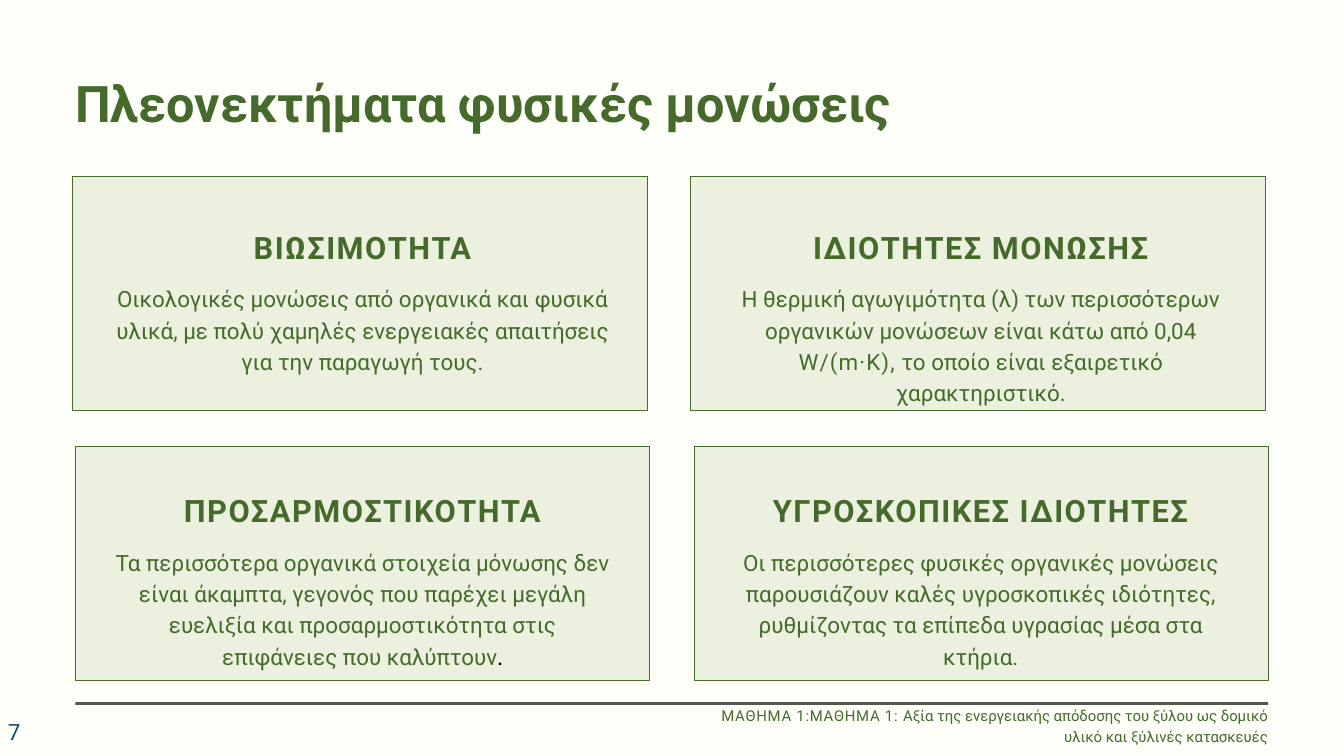
from pptx import Presentation
from pptx.dml.color import RGBColor
from pptx.enum import shapes, text
from pptx.util import Inches, Pt

COLORS = {
    "background": "FEFFF8",
    "green": "456A2C",
    "card": "EBF1DE",
    "rule": "52584D",
    "number": "1E4D65",
    "black": "000000",
}
ALIGN = text.PP_ALIGN
CARD_SIZE = (8.55, 3.48)
CARD_TEXT_WIDTH = 7.39

# Each card: box left and top, inset of its text, heading, body runs
CARDS = [
    ((1.08, 2.62), (0.62, 0.76), "ΒΙΩΣΙΜΟΤΗΤΑ", [
        ("Οικολογικές μονώσεις από οργανικά και φυσικά υλικά, με πολύ χαμηλές "
         "ενεργειακές απαιτήσεις για την παραγωγή τους.", {})]),
    ((10.28, 2.62), (0.62, 0.76), "ΙΔΙΟΤΗΤΕΣ ΜΟΝΩΣΗΣ", [
        ("Η θερμική αγωγιμότητα (λ) των περισσότερων οργανικών μονώσεων "
         "είναι κάτω από 0,04", {}),
        (" W/(m·K),", {"spacing": 1.2}),
        (" το οποίο είναι εξαιρετικό χαρακτηριστικό.", {})]),
    ((1.12, 6.64), (0.58, 0.66), "ΠΡΟΣΑΡΜΟΣΤΙΚΟΤΗΤΑ", [
        ("Τα περισσότερα οργανικά στοιχεία μόνωσης δεν είναι άκαμπτα, γεγονός "
         "που παρέχει μεγάλη ευελιξία και προσαρμοστικότητα στις επιφάνειες "
         "που καλύπτουν", {}),
        (".", {"font": "Calibri", "color": "black"})]),
    ((10.33, 6.64), (0.57, 0.66), "ΥΓΡΟΣΚΟΠΙΚΕΣ ΙΔΙΟΤΗΤΕΣ", [
        ("Οι περισσότερες φυσικές οργανικές μονώσεις παρουσιάζουν καλές "
         "υγροσκοπικές ιδιότητες, ρυθμίζοντας τα επίπεδα υγρασίας μέσα στα "
         "κτήρια.", {})]),
]


def rgb(name):
    return RGBColor.from_string(COLORS[name])


def add_run(paragraph, words, size, color="green", font="Roboto", bold=False, spacing=0):
    run = paragraph.add_run()
    run.text = words
    run.font.size = Pt(size)
    run.font.name = font
    run.font.bold = bold
    run.font.color.rgb = rgb(color)
    if spacing:
        run.font._element.set("spc", str(round(spacing * 100)))


def add_text(slide, box, runs, size, leading=None, align=ALIGN.LEFT, inset=0):
    frame = slide.shapes.add_textbox(*map(Inches, box)).text_frame
    frame.word_wrap = True
    frame.margin_left = frame.margin_right = Inches(inset)
    frame.margin_top = frame.margin_bottom = Inches(inset / 2)
    paragraph = frame.paragraphs[0]
    paragraph.alignment = align
    if leading:
        paragraph.line_spacing = Pt(leading)
    for words, style in runs:
        add_run(paragraph, words, size, **style)
    return frame


def add_panel(slide, box, fill, line=None):
    panel = slide.shapes.add_shape(shapes.MSO_SHAPE.RECTANGLE, *map(Inches, box))
    panel.shadow.inherit = False
    panel.fill.solid()
    panel.fill.fore_color.rgb = rgb(fill)
    if line:
        panel.line.color.rgb = rgb(line)
        panel.line.width = Pt(0.75)
    else:
        panel.line.fill.background()


def add_card(slide, position, inset, heading, body):
    left, top = position
    text_left, text_top = left + inset[0], top + inset[1]
    add_panel(slide, (left, top, *CARD_SIZE), "card", "green")
    add_text(slide, (text_left, text_top, CARD_TEXT_WIDTH, 0.58),
             [(heading, {"bold": True, "spacing": 1.6})], 33, 41.2, ALIGN.CENTER)
    add_text(slide, (text_left, text_top + 0.8, CARD_TEXT_WIDTH, 1.91),
             body, 24, 33.6, ALIGN.CENTER)


def add_footer(slide, left, top, width):
    add_panel(slide, (left, top, width, 0.04), "rule")
    # Page number
    number = add_text(slide, (0.02, top + 0.24, 2.33, 0.4),
                      [("7", {"color": "number", "spacing": 1.2})], 24, inset=0.1)
    number.vertical_anchor = text.MSO_ANCHOR.MIDDLE
    # Lesson title, flush with the right end of the rule
    lesson_width = 8.32
    add_text(slide, (left + width - lesson_width, top + 0.02, lesson_width, 0.6), [
        ("ΜΑΘΗΜΑ 1:ΜΑΘΗΜΑ 1: ", {"spacing": 0.8}),
        ("Αξία της ενεργειακής απόδοσης του ξύλου ως δομικό υλικό και ξύλινές "
         "κατασκευές", {}),
    ], 16, 22.4, ALIGN.RIGHT)


def main():
    deck = Presentation()
    deck.slide_width, deck.slide_height = Inches(20), Inches(11.25)
    slide = deck.slides.add_slide(deck.slide_layouts[6])
    slide.background.fill.solid()
    slide.background.fill.fore_color.rgb = rgb("background")

    # Title
    add_text(slide, (1.12, 1.05, 12.38, 0.94),
             [("Πλεονεκτήματα φυσικές μονώσεις", {"bold": True})], 54, 66.8)
    # Cards
    for card in CARDS:
        add_card(slide, *card)
    # Footer
    add_footer(slide, 1.12, 10.45, 17.75)

    deck.save("out.pptx")


if __name__ == "__main__":
    main()
